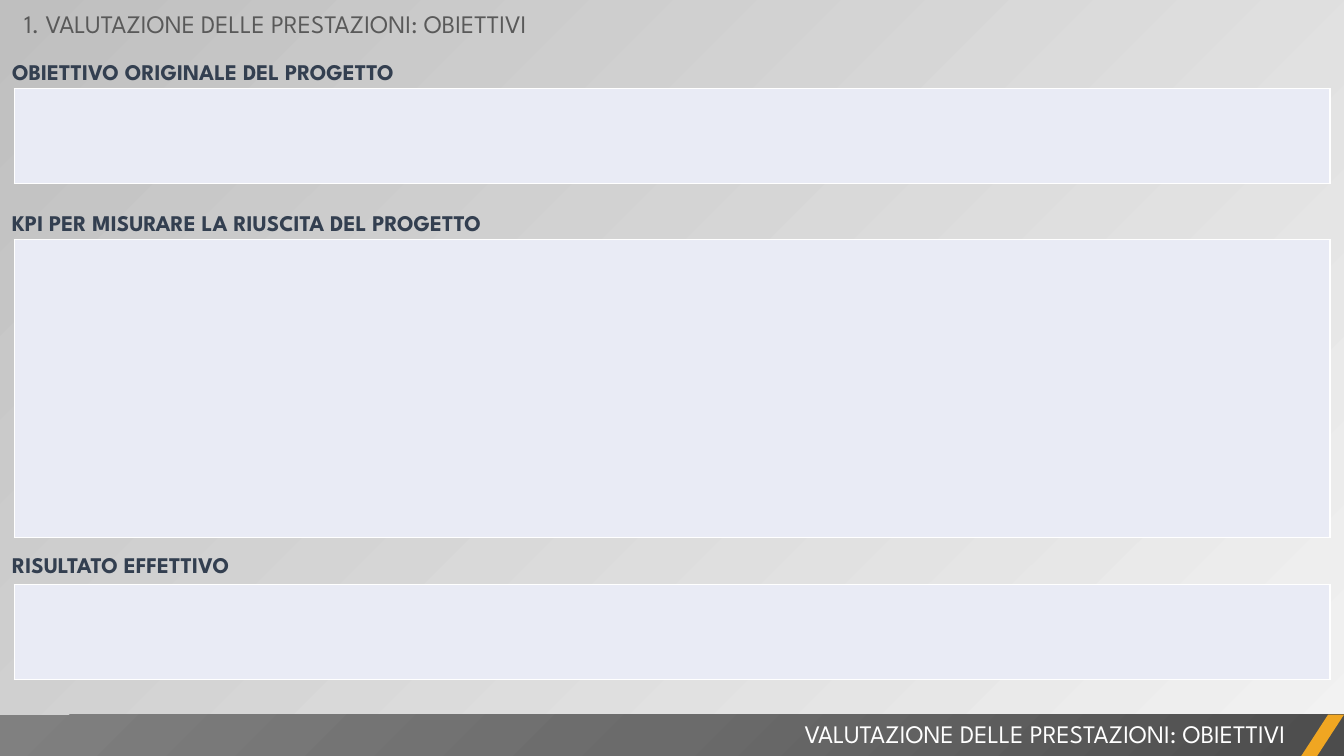
from dataclasses import dataclass

from pptx import Presentation
from pptx.dml.color import RGBColor
from pptx.enum.shapes import MSO_SHAPE
from pptx.enum.text import MSO_AUTO_SIZE, PP_ALIGN
from pptx.oxml import parse_xml
from pptx.oxml.ns import nsdecls
from pptx.util import Inches, Pt

WIDTH, HEIGHT = Inches(13.33), Inches(7.5)


@dataclass(frozen=True)
class Theme:
    """Colours and type sizes of the slide."""
    font: str = "League Spartan"
    title_size: float = 18
    heading_size: float = 16
    heading_leading: float = 21.5
    heading_before: float = 3.2
    heading: str = "333F50"
    title: str = "595959"
    white: str = "FFFFFF"
    panel: str = "E9EBF5"
    accent: str = "F0A622"
    backdrop: tuple = ("F2F2F2", "BFBFBF")
    footer: tuple = ("4C4C4C", "6B6B6B", "808080")


@dataclass(frozen=True)
class Box:
    """A rectangle in percent of the slide's width and height."""
    left: float
    top: float
    width: float
    height: float

    def place(self):
        """Return left, top, width and height in slide units."""
        return (int(WIDTH * self.left / 100), int(HEIGHT * self.top / 100),
                int(WIDTH * self.width / 100), int(HEIGHT * self.height / 100))


THEME = Theme()
MARGIN = 1.05
SECTIONS = (
    ("OBIETTIVO ORIGINALE DEL PROGETTO", Box(0, 6.4, 100, 17.86), 5.33, 35.03),
    ("KPI PER MISURARE LA RIUSCITA DEL PROGETTO", Box(0, 26.4, 100, 44.66), 5.33, 39.83),
    ("RISULTATO EFFETTIVO", Box(0, 71.73, 100, 18.13), 5.6, 25.28),
)
TITLE = "VALUTAZIONE DELLE PRESTAZIONI: OBIETTIVI"


def add_text(page, box, text, size, color, bold=False, align=PP_ALIGN.LEFT):
    """Add a one-paragraph text box and return its frame."""
    frame = page.shapes.add_textbox(*box.place()).text_frame
    frame.word_wrap = True
    frame.auto_size = MSO_AUTO_SIZE.SHAPE_TO_FIT_TEXT
    frame.text = text
    para = frame.paragraphs[0]
    para.alignment = align
    font = para.runs[0].font
    font.name, font.size, font.bold = THEME.font, Pt(size), bold
    font.color.rgb = RGBColor.from_string(color)
    return frame


def add_bar(page, kind, box):
    """Add a shape without line or shadow."""
    shape = page.shapes.add_shape(kind, *box.place())
    shape.shadow.inherit = False
    shape.line.fill.background()
    return shape


def paint_backdrop(page):
    """Fill the page with a diagonal grey gradient."""
    fill = page.background.fill
    fill.gradient()
    fill.gradient_angle = 135
    for stop, color in zip(fill.gradient_stops, THEME.backdrop):
        stop.color.rgb = RGBColor.from_string(color)


def add_panel(page, box):
    """Add a one-cell table with white borders."""
    table = page.shapes.add_table(1, 1, *box.place()).table
    table.first_row = table.horz_banding = False
    cell = table.cell(0, 0)
    cell.fill.solid()
    cell.fill.fore_color.rgb = RGBColor.from_string(THEME.panel)
    properties = cell._tc.get_or_add_tcPr()
    for index, side in enumerate(("lnL", "lnR", "lnT", "lnB")):
        properties.insert(index, parse_xml(
            f'<a:{side} {nsdecls("a")} w="12700"><a:solidFill>'
            f'<a:srgbClr val="{THEME.white}"/></a:solidFill></a:{side}>'))


def add_section(page, box, text, heading_height, heading_width):
    """Place a heading above its empty panel."""
    heading = Box(box.left, box.top, heading_width, 5.33)
    frame = add_text(page, heading, text, THEME.heading_size, THEME.heading, bold=True)
    frame.margin_left = frame.margin_right = Inches(0.12)
    frame.margin_top = frame.margin_bottom = Inches(0.06)
    para = frame.paragraphs[0]
    para.line_spacing = Pt(THEME.heading_leading)
    para.space_before = Pt(THEME.heading_before)
    add_panel(page, Box(box.left + MARGIN, box.top + heading_height,
                        box.width - 2 * MARGIN, box.height - heading_height))


def add_footer(page, box):
    """Place the shaded footer with its title and slanted accent."""
    bar = add_bar(page, MSO_SHAPE.RECTANGLE, box)
    bar.fill.gradient()
    stops = "".join(f'<a:gs pos="{index * 50000}"><a:srgbClr val="{color}"/></a:gs>'
                    for index, color in enumerate(THEME.footer))
    gradient = bar._element.spPr.find("{*}gradFill")
    gradient.getparent().replace(gradient, parse_xml(
        f'<a:gradFill {nsdecls("a")} rotWithShape="1"><a:gsLst>{stops}</a:gsLst>'
        '<a:path path="circle"><a:fillToRect l="100000" t="100000"/></a:path></a:gradFill>'))
    add_text(page, Box(box.left + 39.38, box.top - 0.13, 57.01, 5.33), TITLE,
             THEME.title_size, THEME.white, align=PP_ALIGN.RIGHT)
    accent_width = 3.23
    accent = add_bar(page, MSO_SHAPE.PARALLELOGRAM,
                     Box(box.left + box.width - accent_width, box.top, accent_width, box.height))
    accent.adjustments[0] = 0.65
    accent.fill.solid()
    accent.fill.fore_color.rgb = RGBColor.from_string(THEME.accent)


def main():
    """Build the slide and save it."""
    deck = Presentation()
    deck.slide_width, deck.slide_height = WIDTH, HEIGHT
    page = deck.slides.add_slide(deck.slide_layouts[6])
    paint_backdrop(page)
    for text, box, heading_height, heading_width in SECTIONS:
        add_section(page, box, text, heading_height, heading_width)
    add_text(page, Box(MARGIN, 0.4, 54.31, 5.33), f"1. {TITLE}",
             THEME.title_size, THEME.title)
    add_footer(page, Box(0, 94.53, 100, 5.6))
    deck.save("out.pptx")


if __name__ == "__main__":
    main()
